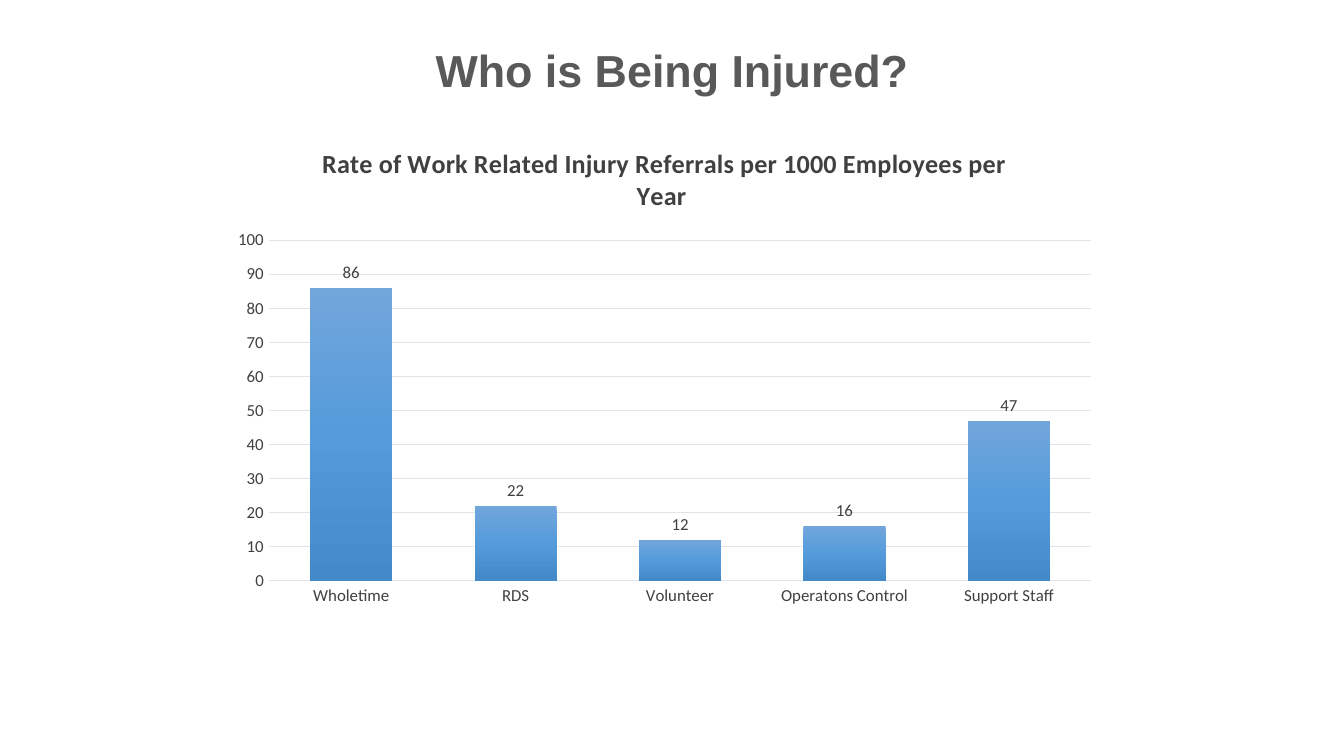
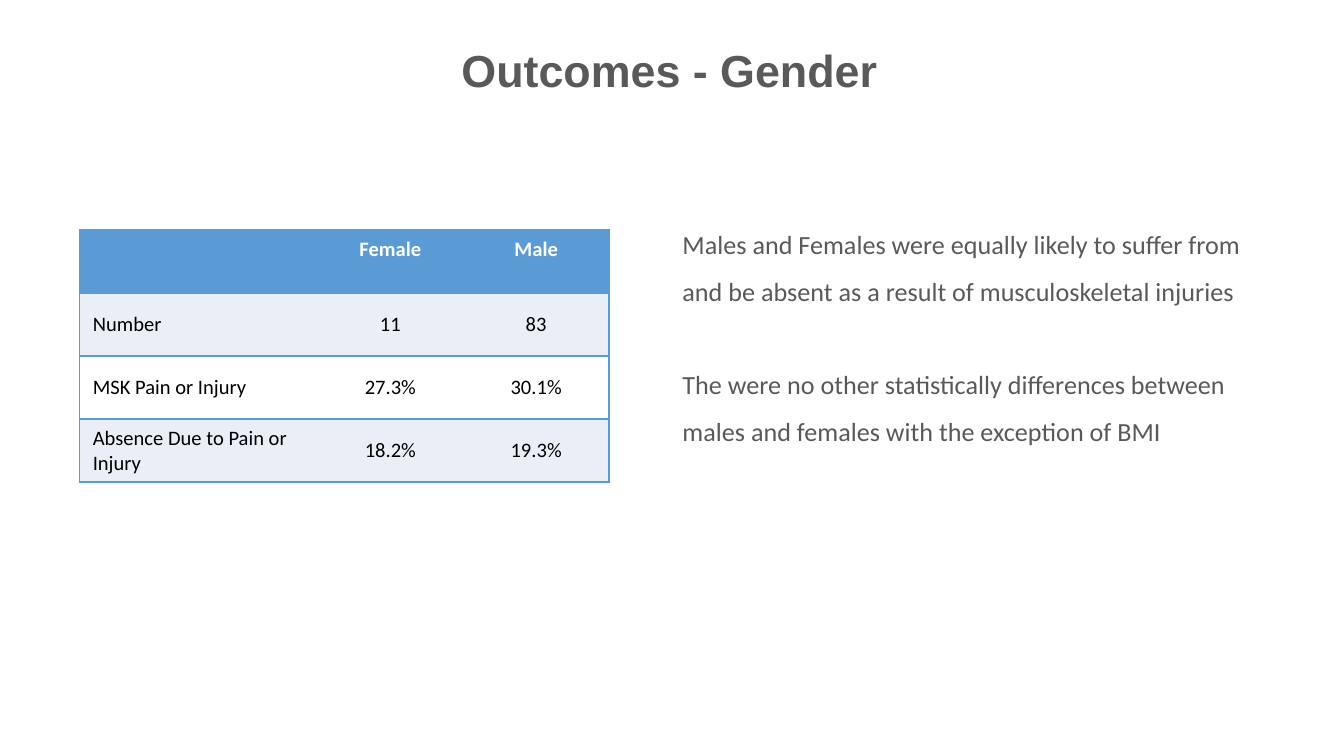
import pptx
import pptx.chart.data
import pptx.dml.color
import pptx.enum.chart
import pptx.enum.text
import pptx.oxml
import pptx.oxml.ns
import pptx.util
from lxml import etree

Inches = pptx.util.Inches
Pt = pptx.util.Pt
RGBColor = pptx.dml.color.RGBColor
PP_ALIGN = pptx.enum.text.PP_ALIGN
MSO_ANCHOR = pptx.enum.text.MSO_ANCHOR
XL = pptx.enum.chart

GRAY = RGBColor(0x59, 0x59, 0x59)
CHART_TEXT = RGBColor(0x40, 0x40, 0x40)
GRID = RGBColor(0xE0, 0xE5, 0xEB)
BLUE = RGBColor(0x5B, 0x9B, 0xD5)
BAND = RGBColor(0xEA, 0xEF, 0xF7)
WHITE = RGBColor(0xFF, 0xFF, 0xFF)
BLACK = RGBColor(0, 0, 0)
BAR_STOPS = [
    (0, RGBColor(0x71, 0xA6, 0xDB)),
    (50, RGBColor(0x55, 0x9B, 0xDB)),
    (100, RGBColor(0x44, 0x8A, 0xCA)),
]
TITLE_FONT = "Arial"
BODY_FONT = "Calibri"

INJURY_RATES = {
    "Wholetime": 86,
    "RDS": 22,
    "Volunteer": 12,
    "Operatons Control": 16,
    "Support Staff": 47,
}
GENDER_ROWS = [
    ["", "Female", "Male"],
    ["Number", "11", "83"],
    ["MSK Pain or Injury", "27.3%", "30.1%"],
    ["Absence Due to Pain or Injury", "18.2%", "19.3%"],
]
FINDINGS = [
    "Males and Females were equally likely to suffer from and be absent "
    "as a result of musculoskeletal injuries",
    "The were no other statistically differences between males and females "
    "with the exception of BMI",
]


def style_font(font, size, color, bold=False, name=BODY_FONT):
    font.name = name
    font.size = Pt(size)
    font.bold = bold
    font.color.rgb = color


def add_text_box(slide, left, top, width, height):
    box = slide.shapes.add_textbox(
        Inches(left), Inches(top), Inches(width), Inches(height))
    box.text_frame.word_wrap = True
    return box.text_frame


def add_titled_slide(deck, title, left):
    slide = deck.slides.add_slide(deck.slide_layouts[6])
    frame = add_text_box(slide, left, 0, 8.62, 1.09)
    frame.vertical_anchor = MSO_ANCHOR.MIDDLE
    para = frame.paragraphs[0]
    para.text = title
    para.alignment = PP_ALIGN.CENTER
    para.line_spacing = 0.9
    style_font(para.runs[0].font, 24, GRAY, True, TITLE_FONT)
    return slide


def fill_with_gradient(series, stops):
    """Fill the bars from top to bottom; the public API offers two stops only."""
    stop_xml = "".join(
        f'<a:gs pos="{place * 1000}"><a:srgbClr val="{color}"/></a:gs>'
        for place, color in stops)
    gradient = pptx.oxml.parse_xml(
        f'<a:gradFill {pptx.oxml.ns.nsdecls("a")} rotWithShape="1">'
        f'<a:gsLst>{stop_xml}</a:gsLst><a:lin ang="5400000" scaled="0"/>'
        '</a:gradFill>')
    series.format.line.fill.background()
    series._element.spPr.insert(0, gradient)


def style_axis(axis):
    axis.major_tick_mark = XL.XL_TICK_MARK.NONE
    axis.minor_tick_mark = XL.XL_TICK_MARK.NONE
    style_font(axis.tick_labels.font, 9, CHART_TEXT)


def style_grid_line(line):
    line.color.rgb = GRID
    line.width = Pt(0.75)


def add_column_chart(slide, title, rates):
    data = pptx.chart.data.CategoryChartData(number_format="0")
    data.categories = list(rates)
    data.add_series("Series 1", list(rates.values()))
    chart = slide.shapes.add_chart(
        XL.XL_CHART_TYPE.COLUMN_CLUSTERED, Inches(1.64), Inches(0.92),
        Inches(6.61), Inches(3.66), data).chart
    style_font(chart.font, 10, CHART_TEXT)
    chart.has_legend = False
    chart.has_title = True
    para = chart.chart_title.text_frame.paragraphs[0]
    para.text = title
    style_font(para.runs[0].font, 14, CHART_TEXT, True)
    chart.chart_title.include_in_layout = False

    style_axis(chart.category_axis)
    style_grid_line(chart.category_axis.format.line)
    value_axis = chart.value_axis
    style_axis(value_axis)
    value_axis.format.line.fill.background()
    style_grid_line(value_axis.major_gridlines.format.line)
    value_axis.minimum_scale, value_axis.maximum_scale = 0, 100
    value_axis.major_unit = 10

    plot = chart.plots[0]
    plot.vary_by_categories = False
    plot.gap_width = 100
    plot.overlap = -24
    plot.has_data_labels = True
    labels = plot.data_labels
    labels.show_value = True
    labels.number_format = "0"
    labels.number_format_is_linked = False
    labels.position = XL.XL_LABEL_POSITION.OUTSIDE_END
    style_font(labels.font, 9, CHART_TEXT)
    fill_with_gradient(plot.series[0], BAR_STOPS)


def set_borders(cell, edges):
    """Draw the named edges (L, R, T, B) and clear the others."""
    properties = cell._tc.get_or_add_tcPr()
    qualified = pptx.oxml.ns.qn
    for edge in "LRTB":
        line = etree.SubElement(properties, qualified(f"a:ln{edge}"), w=str(Pt(1)))
        if edge in edges:
            fill = etree.SubElement(line, qualified("a:solidFill"))
            etree.SubElement(fill, qualified("a:srgbClr"), val=str(BLUE))
        else:
            etree.SubElement(line, qualified("a:noFill"))


def style_cell(cell, row, column, last_column):
    header = row == 0
    edges = "TB" + "L" * (column == 0) + "R" * (column == last_column)
    set_borders(cell, edges)
    cell.fill.solid()
    cell.fill.fore_color.rgb = BLUE if header else BAND if row % 2 else WHITE
    cell.vertical_anchor = MSO_ANCHOR.TOP if header else MSO_ANCHOR.MIDDLE
    para = cell.text_frame.paragraphs[0]
    para.alignment = PP_ALIGN.CENTER if column else PP_ALIGN.LEFT
    for span in para.runs:
        style_font(span.font, 11, WHITE if header else BLACK, header)


def add_table(slide, rows, widths, row_height):
    table = slide.shapes.add_table(
        len(rows), len(widths), Inches(0.59), Inches(1.71),
        Inches(sum(widths)), Inches(row_height * len(rows))).table
    table.first_row = False
    table.horz_banding = False
    for column, width in zip(table.columns, widths):
        column.width = Inches(width)
    for r, texts in enumerate(rows):
        table.rows[r].height = Inches(row_height)
        for c, text in enumerate(texts):
            cell = table.cell(r, c)
            cell.text = text
            style_cell(cell, r, c, len(widths) - 1)


def add_findings(slide, findings):
    frame = add_text_box(slide, 4.98, 1.53, 4.63, 2.22)
    for index, text in enumerate(findings):
        para = frame.add_paragraph() if index else frame.paragraphs[0]
        para.text = text
        para.line_spacing = 1.5
        if index:
            para.space_before = Pt(25)
        style_font(para.runs[0].font, 14, GRAY)


def main():
    deck = pptx.Presentation()
    deck.slide_width = Inches(10)
    deck.slide_height = deck.slide_width * 9 // 16

    injured = add_titled_slide(deck, "Who is Being Injured?", 0.69)
    add_column_chart(
        injured,
        "Rate of Work Related Injury Referrals per 1000 Employees per Year ",
        INJURY_RATES)

    gender = add_titled_slide(deck, "Outcomes - Gender", 0.67)
    add_table(gender, GENDER_ROWS, [1.77, 1.09, 1.08], 0.47)
    add_findings(gender, FINDINGS)

    deck.save("out.pptx")


if __name__ == "__main__":
    main()
